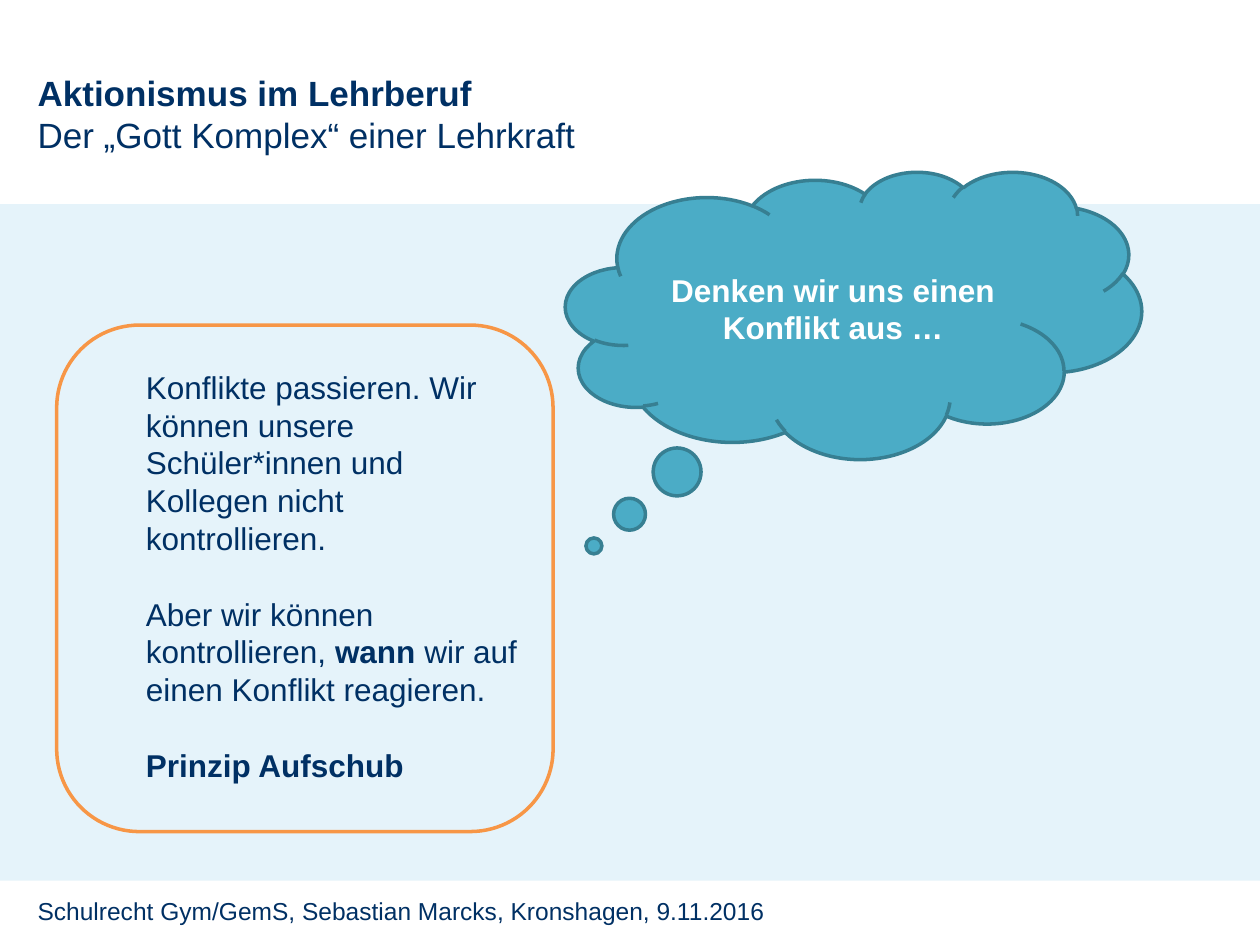
from pptx import Presentation
from pptx.dml.color import RGBColor
from pptx.enum.shapes import MSO_SHAPE
from pptx.enum.text import MSO_ANCHOR, PP_ALIGN
from pptx.oxml.ns import qn
from pptx.util import Inches, Pt
from lxml.etree import SubElement

# Content: each paragraph is a list of (text, bold) runs
TITLE = [
    [("Aktionismus im Lehrberuf", True)],
    [("Der „Gott Komplex“ einer Lehrkraft", False)],
]
THOUGHT = [[("Denken wir uns einen Konflikt aus …", True)]]
ADVICE = [
    [("Konflikte passieren. Wir können unsere Schüler*innen und "
      "Kollegen nicht kontrollieren.", False)],
    [("Aber wir können kontrollieren, ", False), ("wann", True),
     (" wir auf einen Konflikt reagieren.", False)],
    [("Prinzip Aufschub", True)],
]
FOOTER = [[("Schulrecht Gym/GemS, Sebastian Marcks, Kronshagen, 9.11.2016", False)]]

NAVY, BLUE, TEAL, DARK_TEAL, ORANGE, WHITE = (
    "003064", "008CCF", "4BACC6", "377F92", "F79646", "FFFFFF")


def color(hex_string):
    return RGBColor.from_string(hex_string)


def write(frame, paragraphs, size=18, ink=NAVY, align=PP_ALIGN.LEFT,
          anchor=MSO_ANCHOR.TOP, gap=0):
    frame.word_wrap = True
    frame.vertical_anchor = anchor
    for index, runs in enumerate(paragraphs):
        paragraph = frame.paragraphs[0] if index == 0 else frame.add_paragraph()
        paragraph.alignment = align
        if index and gap:
            paragraph.space_before = Pt(gap)
        for text, bold in runs:
            run = paragraph.add_run()
            run.text = text
            run.font.name = "Arial"
            run.font.size = Pt(size)
            run.font.bold = bold
            run.font.color.rgb = color(ink)


def add_panel(slide, kind, box, fill=None, line=None):
    panel = slide.shapes.add_shape(kind, *map(Inches, box))
    panel.shadow.inherit = False
    if fill:
        panel.fill.solid()
        panel.fill.fore_color.rgb = color(fill)
    else:
        panel.fill.background()
    if line:
        panel.line.color.rgb = color(line)
        panel.line.width = Pt(2)
    else:
        panel.line.fill.background()
    return panel


def add_text(slide, box, paragraphs, **text_format):
    write(slide.shapes.add_textbox(*map(Inches, box)).text_frame,
          paragraphs, **text_format)


prs = Presentation()
prs.slide_width, prs.slide_height = Inches(10), Inches(7.5)
slide = prs.slides.add_slide(prs.slide_layouts[6])

# Pale background band, 10 % opaque
band = add_panel(slide, MSO_SHAPE.RECTANGLE, (0, 1.62, 10, 5.37), fill=BLUE)
band_color = band.fill._xPr.find(qn("a:solidFill"))[0]
SubElement(band_color, qn("a:alpha"), val="10000")

# Thought bubble
thought = add_panel(slide, MSO_SHAPE.CLOUD_CALLOUT, (4.49, 1.36, 4.57, 2.28),
                    fill=TEAL, line=DARK_TEAL)
thought.adjustments[0], thought.adjustments[1] = -0.451, 0.804
write(thought.text_frame, THOUGHT, ink=WHITE, align=PP_ALIGN.CENTER,
      anchor=MSO_ANCHOR.MIDDLE)

# Footer and title
add_text(slide, (0.2, 7.06, 8.58, 0.52), FOOTER, size=14)
add_text(slide, (0.2, 0.52, 6.38, 0.77), TITLE, size=20)

# Framed advice
add_panel(slide, MSO_SHAPE.ROUNDED_RECTANGLE, (0.45, 2.58, 3.94, 4.02), line=ORANGE)
add_text(slide, (1.06, 2.87, 3.15, 3.43), ADVICE, gap=21.6)

prs.save("out.pptx")
